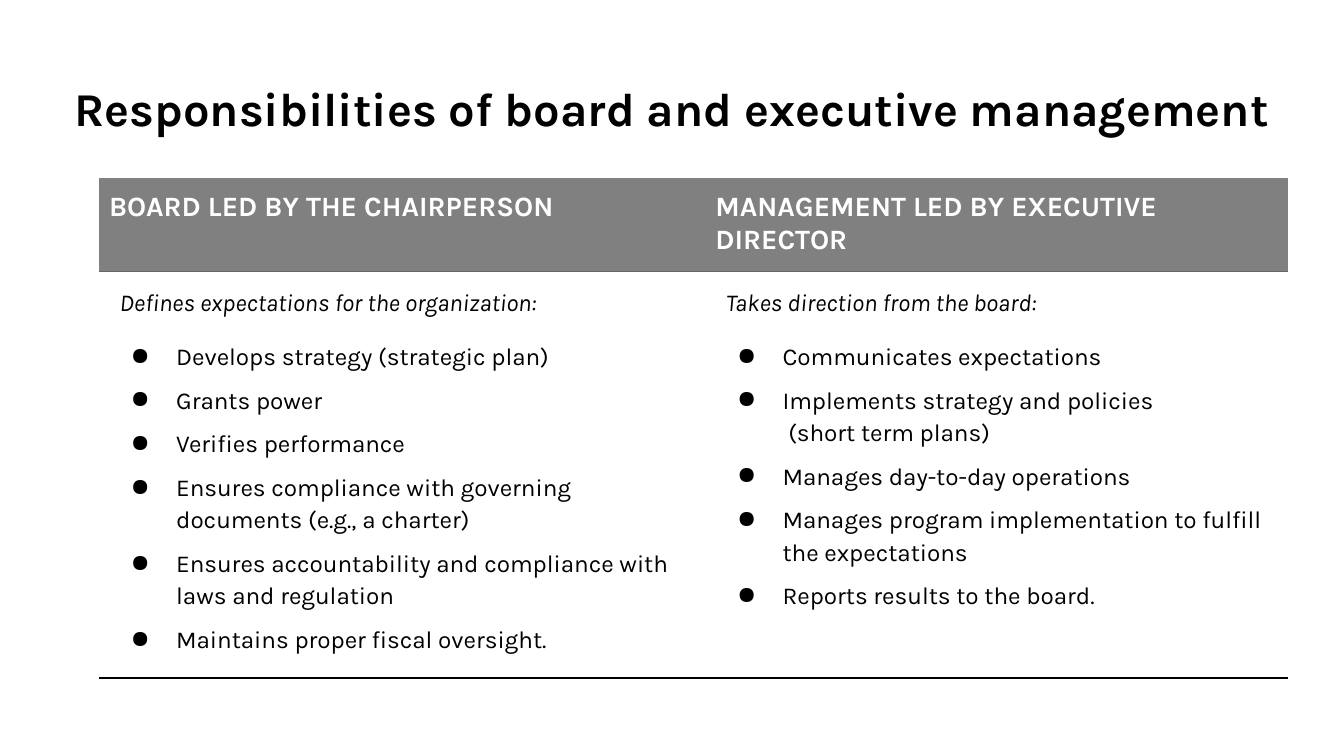
from lxml.etree import SubElement as Sub
from pptx import Presentation
from pptx.dml.color import RGBColor as Rgb
from pptx.enum.text import MSO_ANCHOR as Anchor, PP_ALIGN as Align
from pptx.oxml.ns import qn
from pptx.util import Cm, Pt

HUES = {"ink": "000000", "paper": "FFFFFF", "head": "808080", "rule": "666666"}
FONT = "Karla"
HEADS = ["BOARD LED BY THE CHAIRPERSON", "MANAGEMENT LED BY EXECUTIVE DIRECTOR"]
LEADS = ["Defines expectations for the organization:", "Takes direction from the board:"]
DUTIES = [
    [
        "Develops strategy (strategic plan)",
        "Grants power",
        "Verifies performance",
        "Ensures compliance with governing documents (e.g., a charter)",
        "Ensures accountability and compliance with laws and regulation",
        "Maintains proper fiscal oversight.",
    ],
    [
        "Communicates expectations",
        "Implements strategy and policies\n (short term plans)",
        "Manages day-to-day operations",
        "Manages program implementation to fulfill the expectations",
        "Reports results to the board.",
    ],
]


def apply(item, values):
    for name, value in values.items():
        setattr(item, name, value)


class Deck:
    """Holds the text style and the current slide."""

    title = {"size": Pt(25.2), "bold": True}
    head = {"size": Pt(15), "bold": True}
    lead = {"size": Pt(13), "bold": False, "italic": True}
    body = {"size": Pt(13), "bold": False, "italic": False}
    inset = {"margin_left": Cm(0.18), "margin_right": Cm(0.18),
             "margin_top": Cm(0.25), "margin_bottom": Cm(0.25)}

    def __init__(self, prs):
        self.slide = prs.slides.add_slide(prs.slide_layouts[6])

    def words(self, para, text, style, hue="ink", **form):
        para.text = text
        apply(para, form)
        for run in para.runs:
            apply(run.font, {"name": FONT, **style})
            run.font.color.rgb = Rgb.from_string(HUES[hue])
        for gap in para._p.findall(qn("a:br")):
            Sub(gap, qn("a:rPr"), sz=str(style["size"].centipoints))

    def bullet(self, para):
        """Hang a round bullet in front of a paragraph that is already spaced."""
        props = para._p.get_or_add_pPr()
        props.set("marL", str(Cm(1.27)))
        props.set("indent", str(Cm(-0.86)))
        Sub(Sub(props, qn("a:buClr")), qn("a:srgbClr"), val=HUES["ink"])
        Sub(props, qn("a:buChar"), char="●")

    def edge(self, cell, **hues):
        """Draw the named sides (T, B) and clear the others."""
        props = cell._tc.get_or_add_tcPr()
        for side in "LRTB":
            line = Sub(props, qn(f"a:ln{side}"), w=str(Pt(1)))
            if side in hues:
                fill = Sub(line, qn("a:solidFill"))
                Sub(fill, qn("a:srgbClr"), val=HUES[hues[side]])
            else:
                Sub(line, qn("a:noFill"))

    def heading(self, text, left, top, width, height):
        frame = self.slide.shapes.add_textbox(left, top, width, height).text_frame
        apply(frame, {"word_wrap": True, "vertical_anchor": Anchor.MIDDLE})
        self.words(frame.paragraphs[0], text, self.title, alignment=Align.CENTER)

    def grid(self, left, top, widths, heights):
        table = self.slide.shapes.add_table(
            len(heights), len(widths), left, top, sum(widths), sum(heights)).table
        apply(table, {"first_row": False, "horz_banding": False})
        for col, width in zip(table.columns, widths):
            col.width = width
        for row, height in zip(table.rows, heights):
            row.height = height
        for cell in table.iter_cells():
            apply(cell, self.inset)
        return table

    def label(self, cell, text):
        self.edge(cell, B="rule")
        cell.fill.solid()
        cell.fill.fore_color.rgb = Rgb.from_string(HUES["head"])
        self.words(cell.text_frame.paragraphs[0], text, self.head, "paper")

    def duties(self, cell, lead, items):
        self.edge(cell, T="rule", B="ink")
        cell.fill.background()
        frame = cell.text_frame
        first = frame.paragraphs[0]
        self.words(first, lead, self.lead, line_spacing=1.15, space_before=Pt(12))
        first._p.get_or_add_pPr().set("marL", str(Cm(0.2)))
        for i, text in enumerate(items):
            para = frame.add_paragraph()
            self.words(para, text, self.body, line_spacing=1.15,
                       space_before=Pt(6 if i else 12),
                       space_after=Pt(6 if i == len(items) - 1 else 0))
            self.bullet(para)


def main():
    prs = Presentation()
    apply(prs, {"slide_width": Cm(25.4), "slide_height": Cm(14.29)})
    deck = Deck(prs)
    deck.heading("Responsibilities of board and executive management",
                 Cm(0.86), Cm(1.24), Cm(23.67), Cm(1.6))
    table = deck.grid(Cm(1.88), Cm(3.36), [Cm(11.46), Cm(11)], [Cm(0.89), Cm(6.63)])
    for col, (head, lead, items) in enumerate(zip(HEADS, LEADS, DUTIES)):
        deck.label(table.cell(0, col), head)
        deck.duties(table.cell(1, col), lead, items)
    prs.save("out.pptx")


if __name__ == "__main__":
    main()
